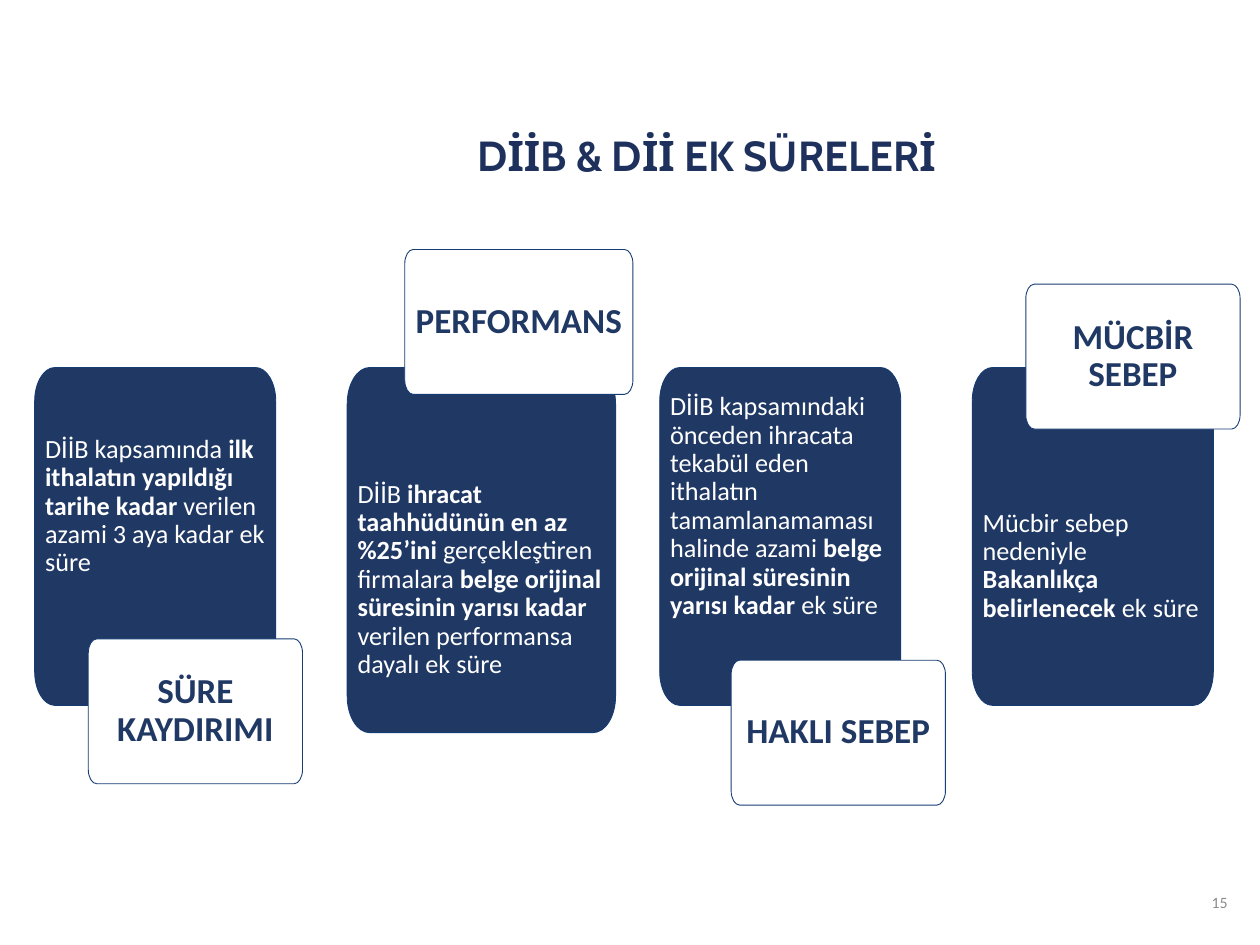
from lxml.etree import SubElement
from pptx import Presentation
from pptx.dml.color import RGBColor
from pptx.enum.text import MSO_ANCHOR, MSO_AUTO_SIZE, PP_ALIGN
from pptx.oxml.ns import qn
from pptx.util import Cm, Pt

NAVY, EDGE, WHITE = "203864", "163C74", "FFFFFF"
FIRST_LEFT, PITCH, CARD_TOP = 0.7, 6.3, 7.41
CARD, WIDE_CARD = (4.86, 6.81), (5.41, 7.36)
LABEL, WIDE_LABEL = (4.32, 2.92), (4.6, 2.92)
LABEL_ABOVE, LABEL_BELOW = (0.21, 1.4, 0.21, 0.2), (0.21, 0.2, 0.21, 1.4)

EXTENSIONS = [
    ("SÜRE KAYDIRIMI", CARD, LABEL, (1.08, 5.47), LABEL_BELOW,
     ["DİİB kapsamında ", "ilk ithalatın yapıldığı tarihe kadar",
      " verilen azami 3 aya kadar ek süre"]),
    ("PERFORMANS", WIDE_CARD, WIDE_LABEL, (1.16, -2.38), LABEL_ABOVE,
     ["DİİB ", "ihracat taahhüdünün en az %25’ini ", "gerçekleştiren firmalara ",
      "belge orijinal süresinin yarısı kadar ", "verilen performansa dayalı ek süre"]),
    ("HAKLI SEBEP", CARD, LABEL, (1.44, 5.9), LABEL_BELOW,
     ["DİİB kapsamındaki önceden ihracata tekabül eden ithalatın "
      "tamamlanamaması halinde azami ",
      "belge orijinal süresinin yarısı kadar ", "ek süre"]),
    ("MÜCBİR SEBEP", CARD, LABEL, (1.08, -1.68), LABEL_ABOVE,
     ["Mücbir sebep nedeniyle ", "Bakanlıkça belirlenecek ", "ek süre"]),
]


def color(value):
    """Return the colour for a hex string."""
    return RGBColor.from_string(value)


def write(shape, parts, size, ink, font="Calibri", bold=False, align=PP_ALIGN.LEFT,
          spacing=0.9, insets=(0.25, 0.13, 0.25, 0.13)):
    """Write one paragraph whose every second part switches weight."""
    frame = shape.text_frame
    frame.word_wrap = True
    frame.auto_size = MSO_AUTO_SIZE.NONE
    frame.vertical_anchor = MSO_ANCHOR.MIDDLE
    (frame.margin_left, frame.margin_top,
     frame.margin_right, frame.margin_bottom) = map(Cm, insets)
    paragraph = frame.paragraphs[0]
    paragraph.alignment = align
    paragraph.line_spacing = spacing
    for index, part in enumerate(parts):
        run = paragraph.add_run()
        run.text = part
        run.font.name = font
        run.font.size = Pt(size)
        run.font.bold = bold != (index % 2 == 1)
        run.font.color.rgb = color(ink)


def round_corners(panel):
    """Turn every second segment of the outline into a quarter ellipse."""
    points = list(panel.element.iter(qn("a:pt")))
    spots = [(int(point.get("x")), int(point.get("y"))) for point in points]
    for index in range(1, len(points), 2):
        start, end = spots[index - 1], spots[index]
        corner = (start[0], end[1]) if index % 4 == 1 else (end[0], start[1])
        segment = points[index].getparent()
        curve = SubElement(segment.getparent(), qn("a:cubicBezTo"))
        segment.getparent().replace(segment, curve)
        controls = [[round(a + 0.55 * (c - a)) for a, c in zip(anchor, corner)]
                    for anchor in (start, end)]
        for x, y in (*controls, end):
            SubElement(curve, qn("a:pt"), x=str(x), y=str(y))


def add_panel(slide, left, top, width, height, corner, fill):
    """Draw a panel with elliptical corners of the given radii."""
    radius_x, radius_y = corner
    right, bottom = left + width, top + height
    outline = [
        (left, top + radius_y), (left + radius_x, top),
        (right - radius_x, top), (right, top + radius_y),
        (right, bottom - radius_y), (right - radius_x, bottom),
        (left + radius_x, bottom), (left, bottom - radius_y),
        (left, top + radius_y),
    ]
    start, *others = [(Cm(x), Cm(y)) for x, y in outline]
    builder = slide.shapes.build_freeform(*start)
    builder.add_line_segments(others, close=True)
    panel = builder.convert_to_shape()
    round_corners(panel)
    panel.shadow.inherit = False
    panel.fill.solid()
    panel.fill.fore_color.rgb = color(fill)
    panel.line.color.rgb = color(EDGE)
    panel.line.width = Pt(0.5)
    return panel


def add_extension(slide, left, top, extension):
    """Place a description card and its overlapping label."""
    name, card_size, label_size, (shift_x, shift_y), insets, description = extension
    width, height = card_size
    card = add_panel(slide, left, top, width, height, (width / 12, height / 10), NAVY)
    write(card, description, 15, WHITE, insets=insets)
    label = add_panel(slide, left + shift_x, top + shift_y, *label_size,
                      (0.17, 0.29), WHITE)
    write(label, [name], 20, NAVY, bold=True, align=PP_ALIGN.CENTER,
          insets=(0.2, 0.15, 0.2, 0.15))


def add_title(slide, left, top, width, height):
    """Move the title placeholder into its box and fill it."""
    title = slide.shapes.title
    title.left, title.top, title.width, title.height = map(Cm, (left, top, width, height))
    write(title, ["DİİB & Dİİ EK SÜRELERİ"], 24, "1E315D", font="Cabin", bold=True,
          align=PP_ALIGN.CENTER)


def add_page_number(slide, left, top, width, height):
    """Place the page number in its box."""
    number = slide.shapes.add_textbox(*map(Cm, (left, top, width, height)))
    write(number, ["15"], 9, "8C8C8C", align=PP_ALIGN.RIGHT, spacing=1.0)


def main():
    """Build and save the slide."""
    presentation = Presentation()
    presentation.slide_width, presentation.slide_height = Cm(25.4), Cm(19.05)
    slide = presentation.slides.add_slide(presentation.slide_layouts[5])
    add_title(slide, 4.39, 1.35, 19.71, 3.68)
    add_page_number(slide, 19.28, 17.68, 5.72, 1.02)
    for column, extension in enumerate(EXTENSIONS):
        add_extension(slide, FIRST_LEFT + column * PITCH, CARD_TOP, extension)
    presentation.save("out.pptx")


if __name__ == "__main__":
    main()
